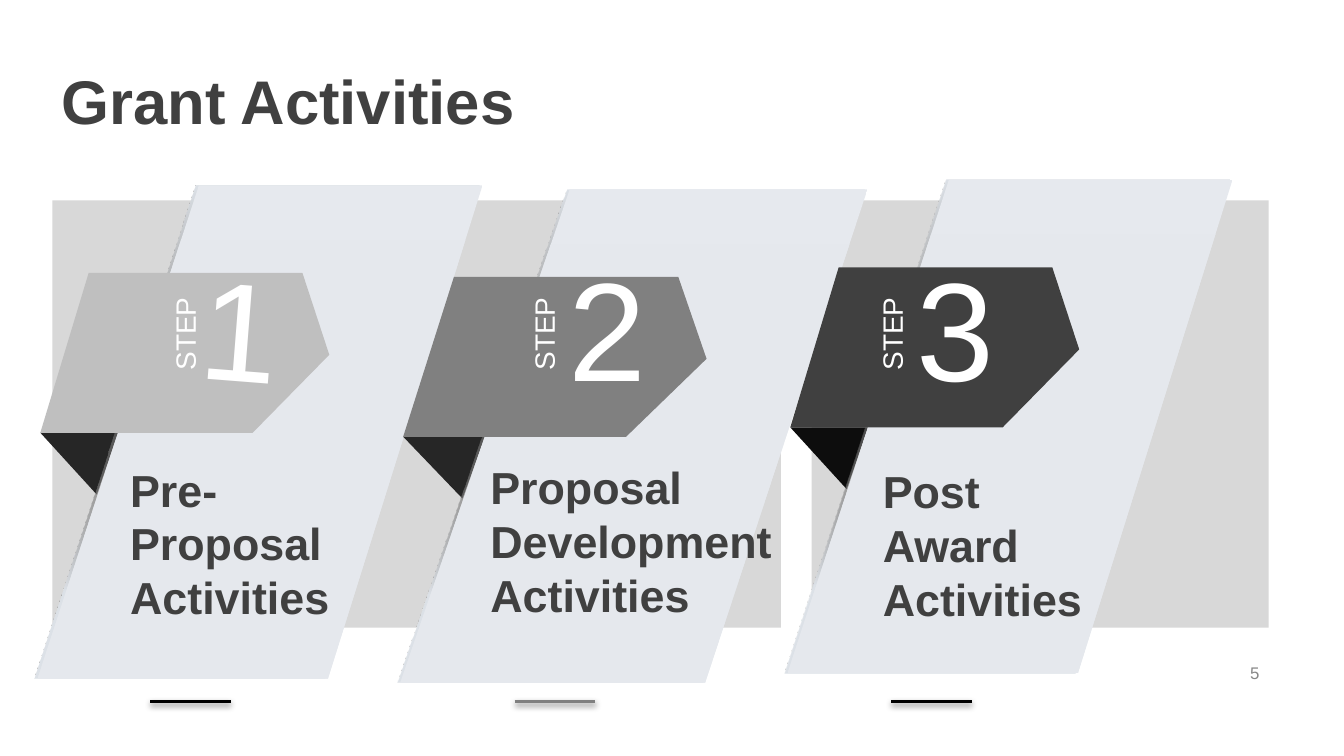
"""Build the Grant Activities slide with three numbered ribbon steps."""
from dataclasses import dataclass

from lxml.etree import SubElement
from pptx import Presentation
from pptx.dml.color import RGBColor as Color
from pptx.enum.shapes import MSO_CONNECTOR as Connector, MSO_SHAPE as Shape
from pptx.enum.text import MSO_ANCHOR as Anchor, PP_ALIGN as Align
from pptx.oxml.ns import qn
from pptx.util import Inches, Pt


@dataclass(frozen=True)
class Theme:
    font: str = "Arial"
    white: str = "FFFFFF"
    black: str = "000000"
    panel: str = "D8D8D8"
    ink: str = "404040"
    silver: str = "BFBFBF"
    grey: str = "808080"
    muted: str = "888888"
    fold: str = "262626"
    dark_fold: str = "0D0D0D"
    edge: tuple = ((0, "DCE1E7", 100), (34, "808080", 45), (63, "808080", 64), (82, "DCE1E7", 100))
    band: tuple = ((0, "E6E9EE", 100), (11, "E5E8ED", 100), (100, "E5E8ED", 100))
    title_size: int = 33
    caption_size: int = 24
    number_size: int = 75
    step_size: int = 15
    page_size: int = 9


@dataclass(frozen=True)
class Step:
    number: str
    caption: str
    left: float
    top: float
    stretch: float
    tag_color: str
    fold_color: str
    rule_color: str
    rule_left: float
    number_left: float
    turn: float
    caption_at: tuple


class SlideBuilder:
    def __init__(self, page, theme):
        self.page = page
        self.theme = theme

    def paint(self, shape, fill):
        if isinstance(fill, str):
            shape.fill.solid()
            shape.fill.fore_color.rgb = Color.from_string(fill)
        else:
            shape.fill.gradient()
            shape.fill.gradient_angle = 270
            stops = shape._element.spPr.find(qn("a:gradFill")).find(qn("a:gsLst"))
            for stop in list(stops):
                stops.remove(stop)
            for position, color, opacity in fill:
                stop = SubElement(stops, qn("a:gs"), pos=str(position * 1000))
                self.tint(stop, color, opacity)
        shape.line.fill.background()
        shape.shadow.inherit = False

    def tint(self, parent, color, opacity):
        tone = SubElement(parent, qn("a:srgbClr"), val=color)
        SubElement(tone, qn("a:alpha"), val=str(opacity * 1000))

    def panel(self, left, top, width, height):
        box = self.page.shapes.add_shape(Shape.RECTANGLE, *map(Inches, (left, top, width, height)))
        self.paint(box, self.theme.panel)

    def outline(self, points, fill):
        corners = [(Inches(x), Inches(y)) for x, y in points]
        builder = self.page.shapes.build_freeform(*corners[0])
        builder.add_line_segments(corners[1:], close=True)
        self.paint(builder.convert_to_shape(), fill)

    def rule(self, left, top, width, color):
        line = self.page.shapes.add_connector(
            Connector.STRAIGHT, *map(Inches, (left, top, left + width, top)))
        line.line.width = Pt(2)
        line.line.color.rgb = Color.from_string(color)
        effects = SubElement(line._element.spPr, qn("a:effectLst"))
        shadow = SubElement(effects, qn("a:outerShdw"), blurRad=str(Pt(3.1)),
                            dist=str(Pt(1.6)), dir="5400000", rotWithShape="0")
        self.tint(shadow, self.theme.black, 38)

    def text(self, words, at, size, color, bold=False, anchor=Anchor.BOTTOM,
             align=Align.LEFT, spacing=1.0, insets=(0.1, 0.05), turn=0, text_turn=0):
        box = self.page.shapes.add_textbox(*map(Inches, at))
        box.rotation = turn
        frame = box.text_frame
        if text_turn:
            frame._txBody.bodyPr.set("rot", str(round(text_turn * 60000)))
        across, down = map(Inches, insets)
        para = frame.paragraphs[0]
        span = para.add_run()
        span.text = words
        span.font.color.rgb = Color.from_string(color)
        formats = {
            frame: {"word_wrap": True, "vertical_anchor": anchor, "margin_left": across,
                    "margin_right": across, "margin_top": down, "margin_bottom": down},
            para: {"alignment": align, "line_spacing": spacing},
            span.font: {"name": self.theme.font, "size": Pt(size), "bold": bold},
        }
        for target, values in formats.items():
            for name, value in values.items():
                setattr(target, name, value)

    def ribbon(self, step):
        fold = [(0.42, 2.3), (0.58, 1.84), (0, 1.84)]
        band = [(1.18, 0), (3.29, 0), (2.14, 3.67), (-0.02, 3.67)]
        tag = [(0, 1.84), (1.58, 1.84), (2.15, 1.26), (1.95, 0.65), (0.36, 0.65)]
        layers = ((fold, 0, step.fold_color), (band, -0.02, self.theme.edge),
                  (band, 0, self.theme.band), (tag, 0, step.tag_color))
        for points, shift, fill in layers:
            self.outline([(step.left + shift + x * step.stretch, step.top + y)
                          for x, y in points], fill)
        self.rule(step.rule_left, 5.22, 0.6, step.rule_color)

    def labels(self, step, step_left):
        theme = self.theme
        self.text(step.caption, step.caption_at, theme.caption_size, theme.ink, bold=True)
        centred = {"color": theme.white, "align": Align.CENTER, "insets": (0, 0)}
        self.text(step.number, (step.number_left, 1.79, 1.28, 1.26), theme.number_size,
                  turn=step.turn, text_turn=step.turn, **centred)
        self.text("STEP", (step_left, 2.36, 0.55, 0.25), theme.step_size, turn=270, **centred)


def main():
    theme = Theme()
    deck = Presentation()
    deck.slide_width = Inches(10)
    deck.slide_height = deck.slide_width * 9 // 16
    builder = SlideBuilder(deck.slides.add_slide(deck.slide_layouts[6]), theme)

    for left, width in ((0.39, 5.42), (6.04, 3.4)):
        builder.panel(left, 1.49, width, 3.18)
    framed = {"anchor": Anchor.MIDDLE, "insets": (0.07, 0.04)}
    builder.text("5", (7.19, 4.86, 2.25, 0.3), theme.page_size, theme.muted,
                 align=Align.RIGHT, **framed)
    builder.text("Grant Activities", (0.39, 0.3, 3.99, 0.96), theme.title_size, theme.ink,
                 bold=True, spacing=0.9, **framed)

    steps = (
        Step("1", "Pre-Proposal Activities", 0.3, 1.38, 1, theme.silver, theme.fold,
             theme.black, 1.12, 1.15, 2.6, (0.87, 3.38, 2.24, 1.31)),
        Step("2", "Proposal Development Activities", 3, 1.41, 1.05, theme.grey, theme.fold,
             theme.grey, 3.83, 3.88, 0, (3.55, 3.36, 2.59, 1.31)),
        Step("3", "Post Award Activities", 5.88, 1.34, 1, theme.ink, theme.dark_fold,
             theme.black, 6.63, 6.47, 0, (6.47, 3.39, 1.8, 1.31)),
    )
    for step in steps:
        builder.ribbon(step)
    for step, step_left in zip(steps, (1.1, 3.77, 6.36)):
        builder.labels(step, step_left)
    deck.save("out.pptx")


if __name__ == "__main__":
    main()
